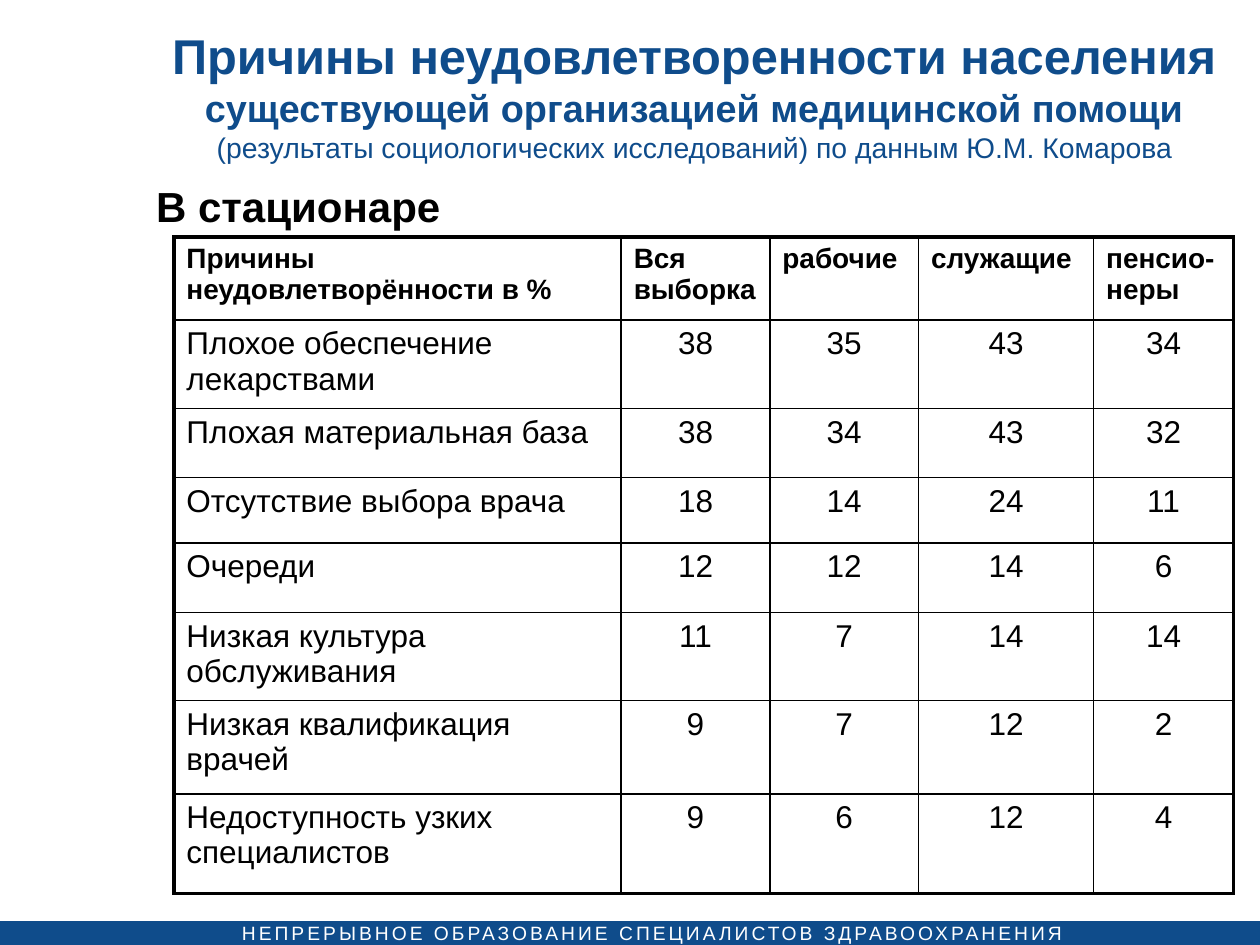
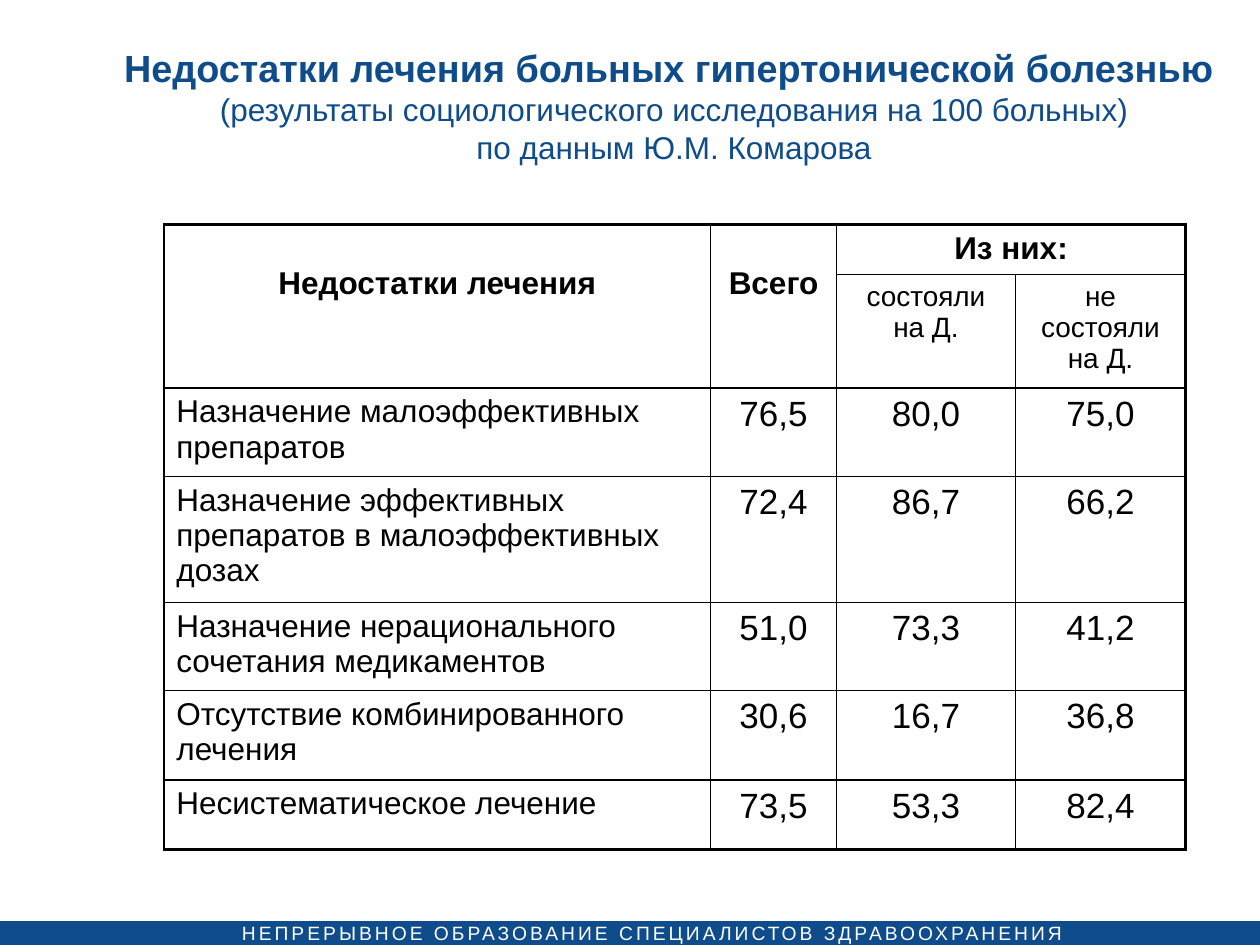
from lxml import etree
from pptx import Presentation
from pptx.dml.color import RGBColor
from pptx.enum.shapes import MSO_SHAPE
from pptx.enum.text import MSO_ANCHOR, PP_ALIGN
from pptx.oxml.ns import qn
from pptx.util import Inches, Pt

RECTANGLE = MSO_SHAPE.RECTANGLE
LEFT, CENTER = PP_ALIGN.LEFT, PP_ALIGN.CENTER
TOP, MIDDLE = MSO_ANCHOR.TOP, MSO_ANCHOR.MIDDLE

FONT = "Arial"
COLORS = {"blue": "0F4C8B", "white": "FFFFFF", "black": "000000"}
THIN, THICK = 1, 2.25
FOOTER = "НЕПРЕРЫВНОЕ ОБРАЗОВАНИЕ СПЕЦИАЛИСТОВ ЗДРАВООХРАНЕНИЯ"

HOSPITAL_HEADINGS = ["Причины неудовлетворённости в %", "Вся выборка",
                     "рабочие", "служащие", "пенсио-неры"]
HOSPITAL_REASONS = [
    ("Плохое обеспечение лекарствами", 38, 35, 43, 34),
    ("Плохая материальная база", 38, 34, 43, 32),
    ("Отсутствие выбора врача", 18, 14, 24, 11),
    ("Очереди", 12, 12, 14, 6),
    ("Низкая культура обслуживания", 11, 7, 14, 14),
    ("Низкая квалификация врачей", 9, 7, 12, 2),
    ("Недоступность узких специалистов", 9, 6, 12, 4),
]
TREATMENT_FLAWS = [
    ("Назначение малоэффективных препаратов", "76,5", "80,0", "75,0"),
    ("Назначение эффективных препаратов в малоэффективных дозах",
     "72,4", "86,7", "66,2"),
    ("Назначение нерационального сочетания медикаментов",
     "51,0", "73,3", "41,2"),
    ("Отсутствие комбинированного лечения", "30,6", "16,7", "36,8"),
    ("Несистематическое лечение", "73,5", "53,3", "82,4"),
]


def add_text(para, text, size=18, bold=False, color="black", spacing=None):
    """Append formatted text to a paragraph, turning newlines into line breaks."""
    for index, line in enumerate(text.split("\n")):
        if index:
            para.add_line_break()
        if not line:
            continue
        span = para.add_run()
        span.text = line
        span.font.name = FONT
        span.font.size = Pt(size)
        span.font.bold = bold
        span.font.color.rgb = RGBColor.from_string(COLORS[color])
        if spacing:
            span.font._element.set("spc", str(round(spacing * 100)))


def add_box(page, left, top, width, height, align=LEFT, anchor=TOP, inset=None):
    """Add a wrapping text box and return its first paragraph."""
    box = page.shapes.add_textbox(
        Inches(left), Inches(top), Inches(width), Inches(height))
    frame = box.text_frame
    frame.word_wrap = True
    frame.vertical_anchor = anchor
    if inset is not None:
        frame.margin_left = frame.margin_right = Inches(inset)
        frame.margin_top = frame.margin_bottom = Inches(inset)
    para = frame.paragraphs[0]
    para.alignment = align
    return para


def add_footer(page):
    """Draw the blue band with its letter-spaced motto."""
    band = page.shapes.add_shape(
        RECTANGLE, Inches(-0.04), Inches(7.31), Inches(10.04), Inches(0.22))
    band.shadow.inherit = False
    band.fill.solid()
    band.fill.fore_color.rgb = RGBColor.from_string(COLORS["blue"])
    band.line.fill.background()
    motto = add_box(page, 1.92, 7.31, 6.63, 0.19, inset=0)
    add_text(motto, FOOTER, size=11, color="white", spacing=1.7)


def add_page(deck, title_place, title_parts):
    """Add a blank page with the footer and a title of (text, size, bold) parts."""
    page = deck.slides.add_slide(deck.slide_layouts[6])
    add_footer(page)
    title = add_box(page, *title_place, align=CENTER, anchor=MIDDLE)
    for text, size, bold in title_parts:
        add_text(title, text, size=size, bold=bold, color="blue")
    return page


def set_border(cell, side, weight):
    """Draw one side of a cell border as a solid black line."""
    line = etree.SubElement(cell._tc.get_or_add_tcPr(), qn(f"a:ln{side}"),
                            w=str(Pt(weight)))
    fill = etree.SubElement(line, qn("a:solidFill"))
    etree.SubElement(fill, qn("a:srgbClr"), val=COLORS["black"])


def add_grid(page, left, top, widths, heights, merges=(), left_edge=THICK):
    """Add an unfilled table with thin inner lines and thick outer edges."""
    table = page.shapes.add_table(
        len(heights), len(widths), Inches(left), Inches(top),
        Inches(sum(widths)), Inches(sum(heights))).table
    table.first_row = table.horz_banding = False
    for column, width in zip(table.columns, widths):
        column.width = Inches(width)
    for row, height in zip(table.rows, heights):
        row.height = Inches(height)
    for first, last in merges:
        table.cell(*first).merge(table.cell(*last))
    for row in range(len(heights)):
        for column in range(len(widths)):
            cell = table.cell(row, column)
            at_right = column + cell.span_width == len(widths)
            at_bottom = row + cell.span_height == len(heights)
            set_border(cell, "L", THIN if column else left_edge)
            set_border(cell, "R", THICK if at_right else THIN)
            set_border(cell, "T", THIN if row else THICK)
            set_border(cell, "B", THICK if at_bottom else THIN)
            cell.fill.background()
    return table


def write_cell(cell, text, align=CENTER, **text_format):
    """Write formatted text into a table cell."""
    para = cell.text_frame.paragraphs[0]
    para.alignment = align
    add_text(para, text, **text_format)


def write_rows(table, first_row, records, value_size):
    """Write rows of a left-aligned label and centred values."""
    for row, (label, *values) in enumerate(records, first_row):
        write_cell(table.cell(row, 0), label, align=LEFT)
        for column, value in enumerate(values, 1):
            write_cell(table.cell(row, column), str(value), size=value_size)


def build_hospital_page(deck):
    """Build the page on reasons for dissatisfaction in hospital."""
    page = add_page(deck, (1.22, 0.13, 8.58, 1.25), [
        ("Причины неудовлетворенности населения ", 27.9, True),
        ("существующей организацией медицинской помощи ", 21.6, True),
        ("(результаты социологических исследований) по данным Ю.М. Комарова",
         16.2, False),
    ])
    table = add_grid(page, 1.38, 1.88, [3.55, 1.18, 1.18, 1.39, 1.11],
                     [0.66, 0.7, 0.55, 0.52, 0.55, 0.66, 0.74, 0.79])
    for column, heading in enumerate(HOSPITAL_HEADINGS):
        write_cell(table.cell(0, column), heading, align=LEFT, size=16, bold=True)
    write_rows(table, 1, HOSPITAL_REASONS, value_size=18)
    subtitle = add_box(page, 1.14, 1.38, 2.55, 0.5)
    add_text(subtitle, "В стационаре", size=24, bold=True)


def build_treatment_page(deck):
    """Build the page on flaws in the treatment of hypertension."""
    page = add_page(deck, (0.84, 0.21, 9.02, 1.25), [
        ("Недостатки лечения больных гипертонической болезнью \n", 21.6, True),
        ("(результаты социологического исследования на 100 больных)\n"
         "по данным Ю.М. Комарова", 18, False),
    ])
    table = add_grid(page, 1.3, 1.78, [4.34, 1, 1.42, 1.35],
                     [0.4, 0.84, 0.7, 1, 0.7, 0.71, 0.55],
                     merges=[((0, 0), (1, 0)), ((0, 1), (1, 1)), ((0, 2), (0, 3))],
                     left_edge=THIN)
    for column, heading in enumerate(["Недостатки лечения", "Всего", "Из них:"]):
        write_cell(table.cell(0, column), heading, bold=True)
    for column in (0, 1):
        table.cell(0, column).margin_top = Inches(0.33)
    for column, heading in enumerate(["состояли на Д.", "не состояли на Д."], 2):
        write_cell(table.cell(1, column), heading, size=16)
    write_rows(table, 2, TREATMENT_FLAWS, value_size=20)


def main():
    """Build and save the deck."""
    deck = Presentation()
    deck.slide_width, deck.slide_height = Inches(10), Inches(7.5)
    build_hospital_page(deck)
    build_treatment_page(deck)
    deck.save("out.pptx")


if __name__ == "__main__":
    main()
